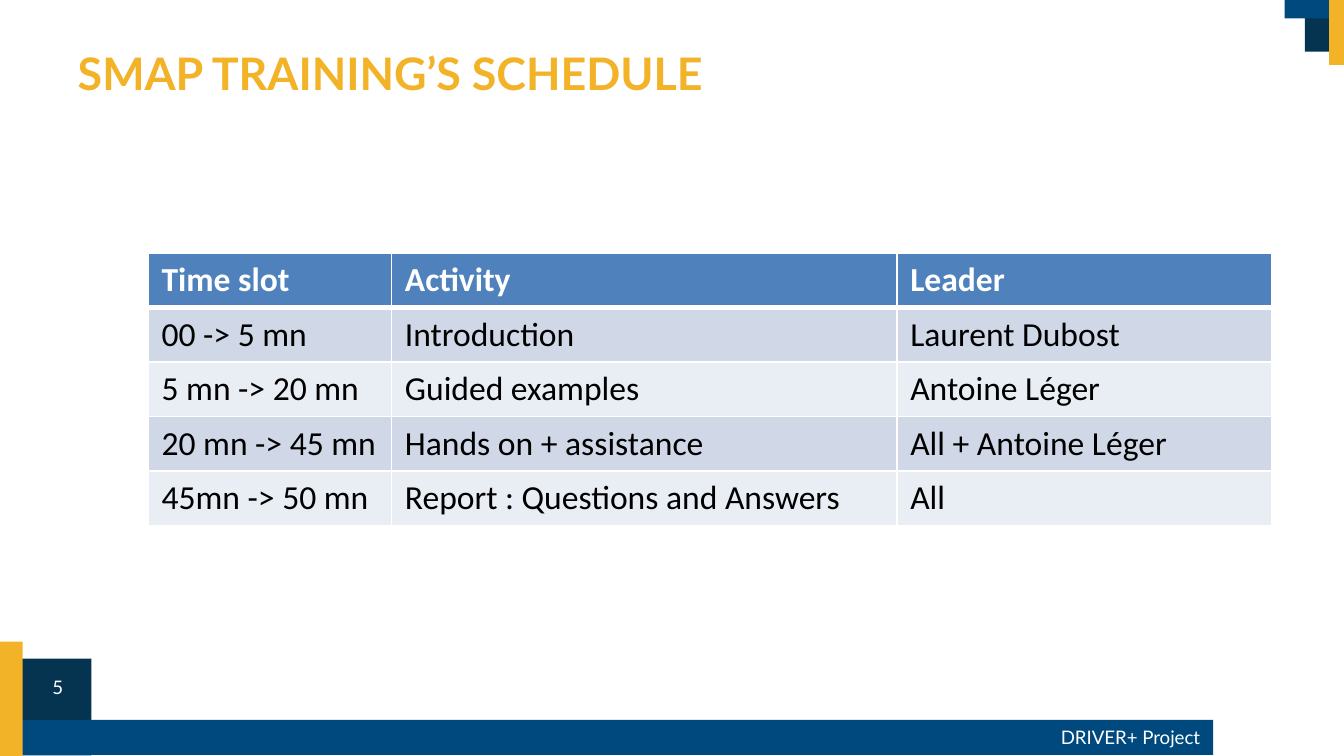
"""Build the training schedule slide."""
from lxml.etree import SubElement
from pptx import Presentation
from pptx.dml.color import RGBColor
from pptx.enum.shapes import MSO_SHAPE as SHAPE
from pptx.enum.text import MSO_ANCHOR as ANCHOR, PP_ALIGN as ALIGN
from pptx.oxml.ns import qn
from pptx.util import Cm, Pt

COLORS = {
    "navy": "053451", "blue": "00497E", "gold": "F3B329",
    "header": "4F81BD", "band": "D0D8E8", "light": "E9EDF4",
    "white": "FFFFFF", "black": "000000",
}
BLOCKS = [
    ("navy", 0, 12.45, 1.73, 1.83),
    ("blue", 0, 13.61, 22.93, 0.66),
    ("gold", 0, 12.13, 0.43, 2.16),
    ("navy", 24.66, 0, 0.74, 0.98),
    ("blue", 24.28, -0.03, 1.12, 0.38),
    ("gold", 25.12, -0.03, 0.28, 1.26),
]
SCHEDULE = [
    ("Time slot", "Activity", "Leader"),
    ("00 -> 5 mn", "Introduction", "Laurent Dubost"),
    ("5 mn -> 20 mn", "Guided examples", "Antoine Léger"),
    ("20 mn -> 45 mn", "Hands on + assistance", "All + Antoine Léger"),
    ("45mn -> 50 mn", "Report : Questions and Answers", "All"),
]
COLUMN_WIDTHS = (4.6, 9.55, 7.09)
ROW_HEIGHT = 1.03


def rgb(name):
    return RGBColor.from_string(COLORS[name])


def write(tf, text, size=10, font="Lato", color="white", bold=False,
          align=ALIGN.LEFT):
    p = tf.paragraphs[0]
    p.alignment = align
    r = p.add_run()
    r.text = text
    r.font.size = Pt(size)
    r.font.name = font
    r.font.bold = bold
    r.font.color.rgb = rgb(color)


def add_block(s, color, left, top, width, height):
    sp = s.shapes.add_shape(SHAPE.RECTANGLE, Cm(left), Cm(top),
                            Cm(width), Cm(height))
    sp.shadow.inherit = False
    sp.fill.solid()
    sp.fill.fore_color.rgb = rgb(color)
    sp.line.fill.background()


def add_text(s, text, left, top, width, height, anchor=ANCHOR.MIDDLE, **style):
    sp = s.shapes.add_textbox(Cm(left), Cm(top), Cm(width), Cm(height))
    tf = sp.text_frame
    tf.word_wrap = True
    tf.vertical_anchor = anchor
    write(tf, text, **style)


def set_borders(cell, **widths):
    tc_pr = cell._tc.get_or_add_tcPr()
    for side in "LRTB":
        ln = SubElement(tc_pr, qn(f"a:ln{side}"), w=str(Pt(widths.get(side, 1))))
        fill = SubElement(ln, qn("a:solidFill"))
        SubElement(fill, qn("a:srgbClr"), val=COLORS["white"])


def add_schedule(s, left, top):
    rows, cols = len(SCHEDULE), len(COLUMN_WIDTHS)
    table = s.shapes.add_table(rows, cols, Cm(left), Cm(top),
                               Cm(sum(COLUMN_WIDTHS)),
                               Cm(rows * ROW_HEIGHT)).table
    for column, width in zip(table.columns, COLUMN_WIDTHS):
        column.width = Cm(width)
    for i, texts in enumerate(SCHEDULE):
        table.rows[i].height = Cm(ROW_HEIGHT)
        header = i == 0
        fill = "header" if header else "band" if i % 2 else "light"
        for j, text in enumerate(texts):
            cell = table.cell(i, j)
            set_borders(cell, T=3 if i == 1 else 1, B=3 if header else 1)
            cell.fill.solid()
            cell.fill.fore_color.rgb = rgb(fill)
            write(cell.text_frame, text, size=18, font="Calibri", bold=header,
                  color="white" if header else "black")


def main():
    prs = Presentation()
    prs.slide_width, prs.slide_height = Cm(25.4), Cm(14.29)
    s = prs.slides.add_slide(prs.slide_layouts[6])
    for block in BLOCKS:
        add_block(s, *block)
    add_text(s, "DRIVER+ Project", 1.75, 13.61, 21.18, 0.66, align=ALIGN.RIGHT)
    add_text(s, "5", 0.46, 12.45, 1.27, 1.07, align=ALIGN.CENTER)
    add_text(s, "SMAP TRAINING’S SCHEDULE", 1.22, 0.38, 22.81, 1.63,
             anchor=ANCHOR.BOTTOM, size=24, color="gold", bold=True)
    add_schedule(s, 2.8, 4.78)
    prs.save("out.pptx")


if __name__ == "__main__":
    main()
